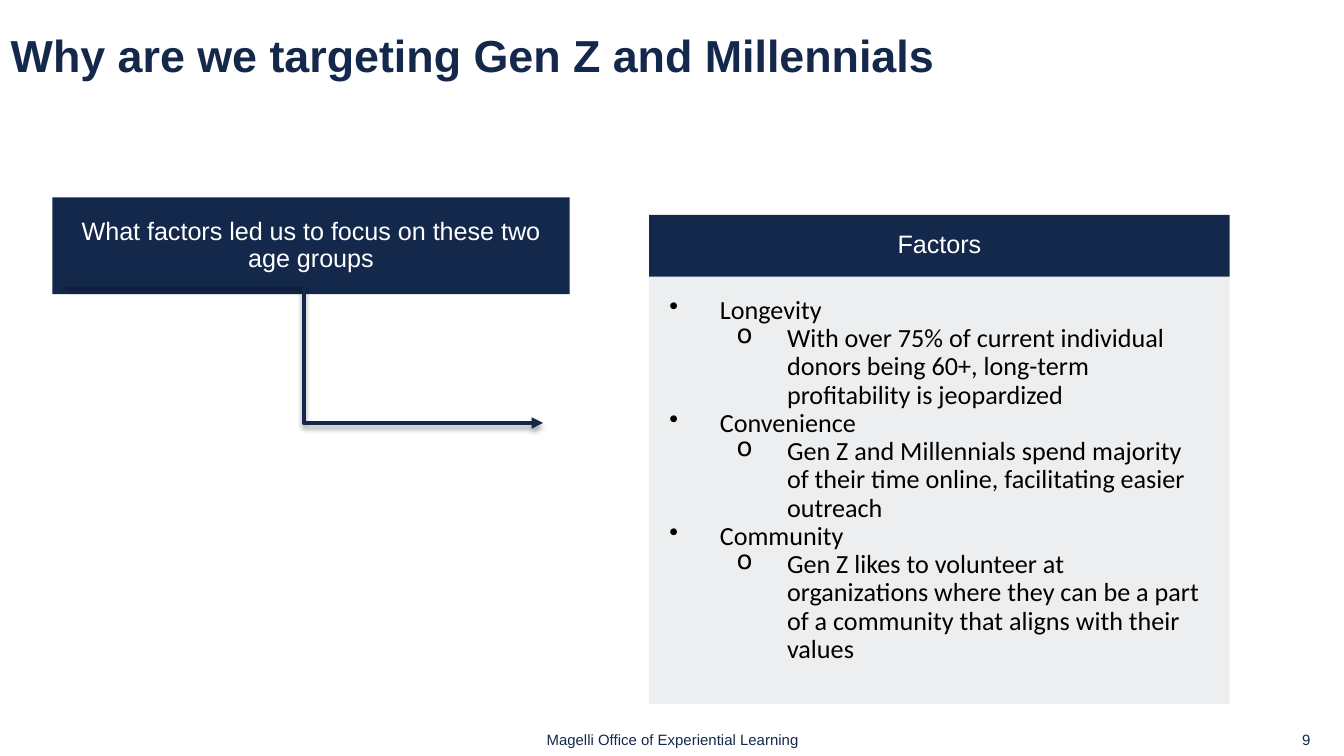
import lxml.etree
import pptx
import pptx.dml.color
import pptx.enum.shapes
import pptx.enum.text
import pptx.oxml
import pptx.oxml.ns
import pptx.util

Pt = pptx.util.Pt
ALIGN = pptx.enum.text.PP_ALIGN
ANCHOR = pptx.enum.text.MSO_ANCHOR
NAVY = "13284B"
WHITE = "FFFFFF"
BLACK = "000000"
PANEL_OPACITY = 8
HEADER_HEIGHT = 33

FACTORS = [
    ("Longevity", "With over 75% of current individual donors being 60+, "
                  "long-term profitability is jeopardized"),
    ("Convenience", "Gen Z and Millennials spend majority of their time online, "
                    "facilitating easier outreach"),
    ("Community", "Gen Z likes to volunteer at organizations where they can be "
                  "a part of a community that aligns with their values"),
]


def color(value):
    return pptx.dml.color.RGBColor.from_string(value)


def add_element(parent, tag, **attributes):
    return lxml.etree.SubElement(parent, pptx.oxml.ns.qn(tag), attributes)


def add_paragraph(frame, text, size=13.5, font="Arial", fill=NAVY, bold=False,
                  align=ALIGN.LEFT, spacing=0.9, bullet=None, level=0, indent=0, hanging=0):
    paragraph = frame.paragraphs[0]
    if paragraph.runs:
        paragraph = frame.add_paragraph()
    paragraph.alignment = align
    paragraph.line_spacing = spacing
    paragraph.level = level
    if bullet:
        properties = paragraph._p.get_or_add_pPr()
        properties.set("marL", str(Pt(indent)))
        properties.set("indent", str(-Pt(hanging)))
        add_element(properties, "a:buChar", char=bullet)
    run = paragraph.add_run()
    run.text = text
    run.font.size = Pt(size)
    run.font.name = font
    run.font.bold = bold
    run.font.color.rgb = color(fill)


def set_frame(shape, inset=0, anchor=ANCHOR.MIDDLE):
    frame = shape.text_frame
    frame.word_wrap = True
    frame.vertical_anchor = anchor
    frame.margin_left = frame.margin_right = Pt(inset)
    frame.margin_top = frame.margin_bottom = Pt(inset)
    return frame


def add_label(slide, box, text, **text_format):
    shape = slide.shapes.add_textbox(*map(Pt, box))
    add_paragraph(set_frame(shape), text, **text_format)


def add_block(slide, box, fill):
    shape = slide.shapes.add_shape(pptx.enum.shapes.MSO_SHAPE.RECTANGLE, *map(Pt, box))
    shape.shadow.inherit = False
    shape.fill.solid()
    shape.fill.fore_color.rgb = color(fill)
    shape.line.fill.background()
    return shape


def add_banner(slide, box, text):
    shape = add_block(slide, box, NAVY)
    add_paragraph(set_frame(shape, inset=3), text, fill=WHITE, align=ALIGN.CENTER)


def add_factors(slide, box):
    left, top, width, height = box
    # Pale panel with the two-level list
    panel = add_block(slide, (left, top + HEADER_HEIGHT, width, height - HEADER_HEIGHT), NAVY)
    panel_color = panel.fill._xPr.find(".//" + pptx.oxml.ns.qn("a:srgbClr"))
    add_element(panel_color, "a:alpha", val=str(PANEL_OPACITY * 1000))
    frame = set_frame(panel, inset=10.8, anchor=ANCHOR.TOP)
    body = dict(size=14, font="Calibri", fill=BLACK, hanging=27)
    for factor, reason in FACTORS:
        add_paragraph(frame, factor, bullet="•", indent=27, **body)
        add_paragraph(frame, reason, bullet="o", level=1, indent=63, **body)
    # Header bar
    add_banner(slide, (left, top, width, HEADER_HEIGHT), "Factors")


def add_arrow(slide, box):
    left, top, width, height = box
    connector = slide.shapes.add_connector(
        pptx.enum.shapes.MSO_CONNECTOR.ELBOW,
        Pt(left), Pt(top), Pt(left + width), Pt(top + height))
    connector.line.width = Pt(2)
    connector.line.color.rgb = color(NAVY)
    add_element(connector.line._get_or_add_ln(), "a:tailEnd", type="triangle")
    # Soft shadow straight below the line
    effects = add_element(connector._element.spPr, "a:effectLst")
    shadow = add_element(effects, "a:outerShdw", blurRad=str(Pt(3.1)), dist=str(Pt(1.6)),
                         dir=str(90 * 60000), rotWithShape="0")
    shadow_color = add_element(shadow, "a:srgbClr", val=BLACK)
    add_element(shadow_color, "a:alpha", val="38000")


def add_footer(slide, box):
    left, top, width, height = box
    small = dict(size=8, spacing=1.0)
    add_label(slide, (left, top, 140.4, height), "Magelli Office of Experiential Learning",
              align=ALIGN.CENTER, **small)
    add_label(slide, (left + width - 162, top, 162, height), "9", align=ALIGN.RIGHT, **small)


def main():
    presentation = pptx.Presentation()
    presentation.slide_width = Pt(720)
    presentation.slide_height = Pt(405)
    slide = presentation.slides.add_slide(presentation.slide_layouts[6])

    # Title
    add_label(slide, (5.76, 9.36, 597, 43.2), "Why are we targeting Gen Z and Millennials",
              size=24, bold=True)
    # Question, arrow and answer
    add_factors(slide, (347.8, 115.2, 311, 262.1))
    add_banner(slide, (28, 105.8, 277.2, 51.8), "What factors led us to focus on these two age groups")
    add_arrow(slide, (34.6, 152.8, 256.3, 73.8))
    # Footer
    add_footer(slide, (290.2, 388.8, 411.8, 14.4))

    presentation.save("out.pptx")


if __name__ == "__main__":
    main()
